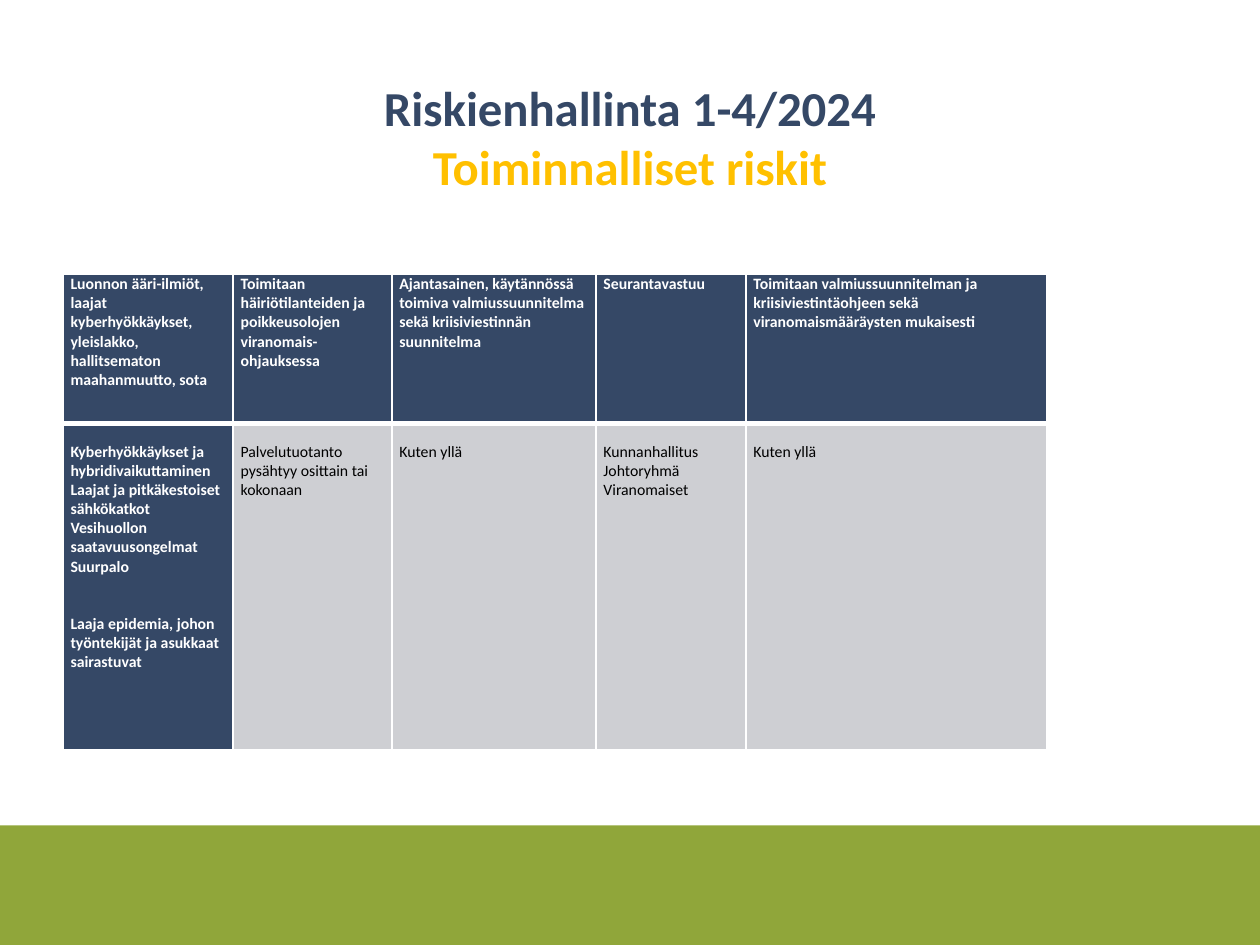
from lxml import etree
from pptx import Presentation
from pptx.dml.color import RGBColor
from pptx.enum.shapes import MSO_SHAPE
from pptx.enum.text import MSO_ANCHOR, PP_ALIGN
from pptx.oxml.ns import qn
from pptx.util import Inches, Pt

RECTANGLE = MSO_SHAPE.RECTANGLE
MIDDLE, TOP = MSO_ANCHOR.MIDDLE, MSO_ANCHOR.TOP
CENTER, LEFT = PP_ALIGN.CENTER, PP_ALIGN.LEFT
NAVY, GOLD, GREEN, GREY = "354866", "FFC000", "90A63A", "CECFD3"
WHITE, BLACK = "FFFFFF", "000000"
WIDTH, HEIGHT = 10, 7.5
MARGIN = 0.05 * WIDTH


def color(value):
    return RGBColor.from_string(value)


def write(para, text, ink, align, **formats):
    para.alignment = align
    span = para.add_run()
    span.text = text
    span.font.color.rgb = color(ink)
    for name, value in formats.items():
        setattr(span.font, name, value)


deck = Presentation()
deck.slide_width, deck.slide_height = Inches(WIDTH), Inches(HEIGHT)
page = deck.slides.add_slide(deck.slide_layouts[6])

band_top = 6.55
band = page.shapes.add_shape(
    RECTANGLE, 0, Inches(band_top), Inches(WIDTH), Inches(HEIGHT - band_top)
)
band.shadow.inherit = False
band.fill.solid()
band.fill.fore_color.rgb = color(GREEN)
band.line.fill.background()

title = page.shapes.add_textbox(
    Inches(MARGIN), Inches(0.46), Inches(WIDTH - 2 * MARGIN), Inches(1.25)
)
frame = title.text_frame
frame.word_wrap = True
frame.vertical_anchor = MIDDLE
heading = [("Riskienhallinta 1-4/2024", NAVY), ("Toiminnalliset riskit", GOLD)]
for i, (text, ink) in enumerate(heading):
    para = frame.add_paragraph() if i else frame.paragraphs[0]
    write(para, text, ink, CENTER, name="Calibri", size=Pt(27.9), bold=True)

columns = [1.35, 1.26, 1.62, 1.19, 2.39]
rows = [1.18, 2.59]
row_top_insets = [0, 0.15]
group_gap = Pt(22)
new_group = "Laaja epidemia, johon työntekijät ja asukkaat sairastuvat"
contents = [
    [
        ["Luonnon ääri-ilmiöt, laajat kyberhyökkäykset, yleislakko, hallitsematon maahanmuutto, sota"],
        ["Toimitaan häiriötilanteiden ja poikkeusolojen viranomais-ohjauksessa"],
        ["Ajantasainen, käytännössä toimiva valmiussuunnitelma sekä kriisiviestinnän suunnitelma"],
        ["Seurantavastuu"],
        ["Toimitaan valmiussuunnitelman ja kriisiviestintäohjeen sekä viranomaismääräysten mukaisesti"],
    ],
    [
        [
            "Kyberhyökkäykset ja hybridivaikuttaminen",
            "Laajat ja pitkäkestoiset sähkökatkot",
            "Vesihuollon saatavuusongelmat",
            "Suurpalo",
            new_group,
        ],
        ["Palvelutuotanto pysähtyy osittain tai kokonaan"],
        ["Kuten yllä"],
        ["Kunnanhallitus", "Johtoryhmä", "Viranomaiset"],
        ["Kuten yllä"],
    ],
]

table = page.shapes.add_table(
    len(rows), len(columns), Inches(MARGIN), Inches(2.18),
    Inches(sum(columns)), Inches(sum(rows)),
).table
for column, width in zip(table.columns, columns):
    column.width = Inches(width)
for row, height in zip(table.rows, rows):
    row.height = Inches(height)

for r, row_contents in enumerate(contents):
    for c, lines in enumerate(row_contents):
        cell = table.cell(r, c)
        emphasized = r == 0 or c == 0
        layout = {
            "margin_left": Inches(0.06),
            "margin_right": Inches(0.06),
            "margin_top": Inches(row_top_insets[r]),
            "margin_bottom": 0,
            "vertical_anchor": TOP,
        }
        for name, value in layout.items():
            setattr(cell, name, value)

        properties = cell._tc.get_or_add_tcPr()
        divider = 3 if r == 0 else 1
        borders = {"lnL": 1, "lnR": 1, "lnT": 4 - divider if r == 0 else 3, "lnB": divider}
        for side, weight in borders.items():
            line = etree.SubElement(properties, qn(f"a:{side}"), w=str(Pt(weight)))
            paint = etree.SubElement(line, qn("a:solidFill"))
            etree.SubElement(paint, qn("a:srgbClr"), val=WHITE)
        cell.fill.solid()
        cell.fill.fore_color.rgb = color(NAVY if emphasized else GREY)

        for i, text in enumerate(lines):
            para = cell.text_frame.add_paragraph() if i else cell.text_frame.paragraphs[0]
            if text == new_group:
                para.space_before = group_gap
            write(para, text, WHITE if emphasized else BLACK, LEFT,
                  name="Calibri", size=Pt(9), bold=emphasized)

deck.save("out.pptx")
